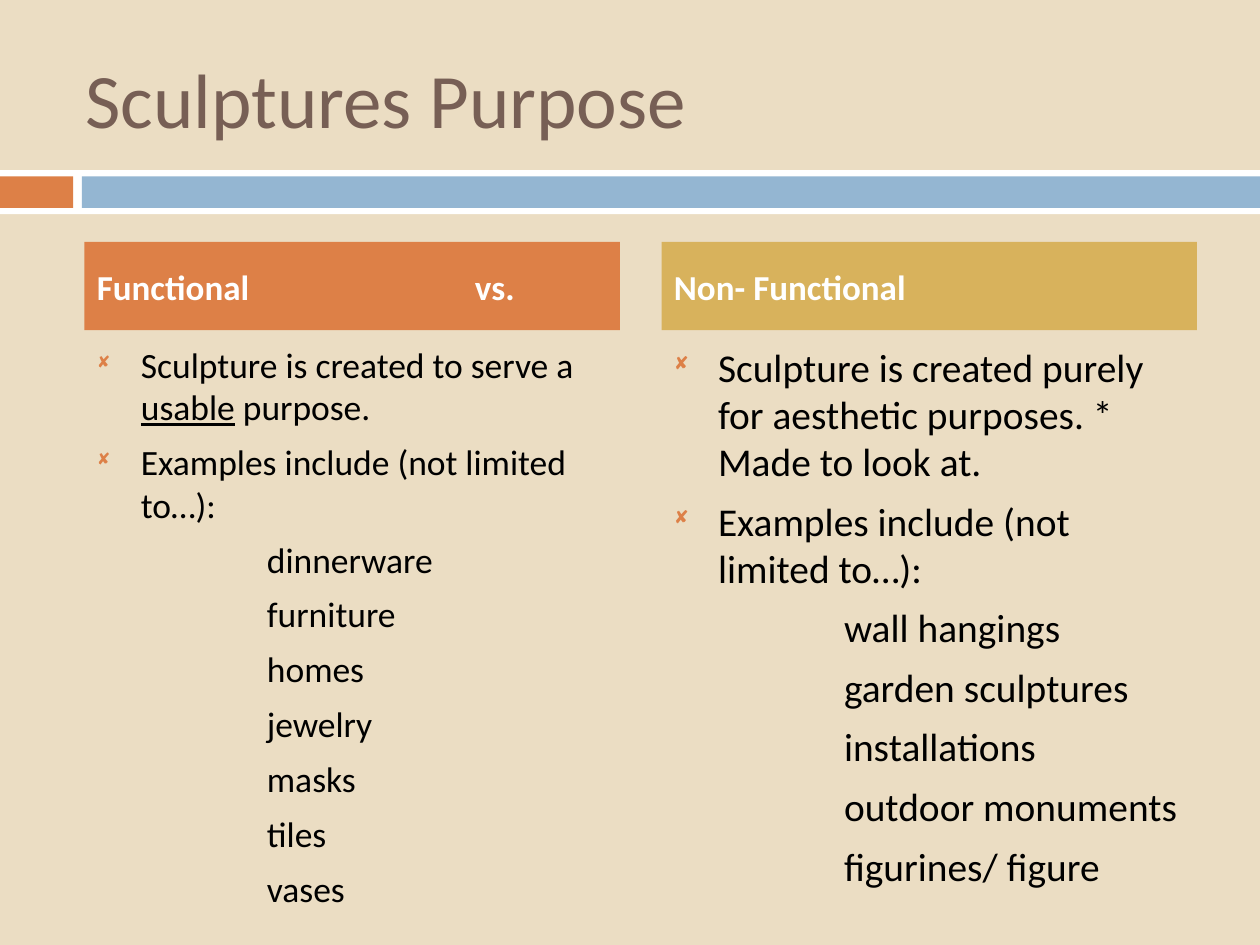
from lxml import etree
from pptx import Presentation
from pptx import util as u
from pptx.dml.color import RGBColor
from pptx.enum import shapes, text
from pptx.oxml import ns

SAND, WHITE, BLACK, BROWN = "EBDDC3", "FFFFFF", "000000", "775F55"
RUST, BLUE, GOLD = "DD8047", "94B6D2", "D8B25C"


def color(code):
    return RGBColor.from_string(code)


def indent(par, left, first):
    """Set the indents, with a tab at every inch."""
    props = par._p.get_or_add_pPr()
    for key, val in {"marL": left, "indent": first, "defTabSz": 1}.items():
        props.set(key, str(u.Inches(val)))


def bullet(par):
    """Put a small square bullet before the paragraph."""
    props = par._p.get_or_add_pPr()
    tint = etree.SubElement(props, ns.qn("a:buClr"))
    etree.SubElement(tint, ns.qn("a:srgbClr"), val=RUST)
    etree.SubElement(props, ns.qn("a:buSzPct"), val="60000")
    etree.SubElement(props, ns.qn("a:buFont"), typeface="Wingdings")
    etree.SubElement(props, ns.qn("a:buChar"), char="◻")


class Deck:
    face = "Calibri"
    hang = 0.35
    gap = 7

    def __init__(self, wide, high):
        self.prs = Presentation()
        self.prs.slide_width = u.Inches(wide)
        self.prs.slide_height = u.Inches(high)

    def page(self, back):
        self.slide = self.prs.slides.add_slide(self.prs.slide_layouts[6])
        fill = self.slide.background.fill
        fill.solid()
        fill.fore_color.rgb = color(back)

    def style(self, font, code, **look):
        for key, val in {"name": self.face, **look}.items():
            setattr(font, key, val)
        font.color.rgb = color(code)

    def bar(self, place, code):
        box = self.slide.shapes.add_shape(
            shapes.MSO_SHAPE.RECTANGLE, *map(u.Inches, place))
        box.shadow.inherit = False
        box.fill.solid()
        box.fill.fore_color.rgb = color(code)
        box.line.fill.background()
        return box

    def label(self, box, words, code, **look):
        """Write one line, left and centred in height, in a shape."""
        frame = box.text_frame
        frame.word_wrap = True
        frame.vertical_anchor = text.MSO_ANCHOR.MIDDLE
        par = frame.paragraphs[0]
        par.alignment = text.PP_ALIGN.LEFT
        indent(par, 0, 0)
        run = par.add_run()
        run.text = words
        self.style(run.font, code, **look)

    def area(self, place):
        box = self.slide.shapes.add_textbox(*map(u.Inches, place))
        box.text_frame.word_wrap = True
        return box

    def body(self, place, points, items, size):
        """Write bulleted points (lists of runs), then tabbed items."""
        frame = self.area(place).text_frame
        rows = points + [["\t\t" + item] for item in items]
        for i, row in enumerate(rows):
            par = frame.paragraphs[0] if i == 0 else frame.add_paragraph()
            indent(par, self.hang, -self.hang)
            if i < len(points):
                bullet(par)
            if i:
                par.space_before = u.Pt(self.gap)
            for j, words in enumerate(row):
                run = par.add_run()
                run.text = words
                self.style(run.font, BLACK, size=u.Pt(size))
                if j == 1:
                    run.font.underline = True


def main():
    deck = Deck(10, 7.5)
    deck.page(SAND)
    for left, top, wide, high, code in (
            (0, 1.35, 10, 0.35, WHITE),
            (0, 1.4, 0.58, 0.25, RUST),
            (0.65, 1.4, 9.35, 0.25, BLUE)):
        deck.bar((left, top, wide, high), code)
    deck.label(deck.area((0.58, 0.3, 8.92, 0.95)), "Sculptures Purpose",
               BROWN, size=u.Pt(44))

    listing = ["Examples include (not limited to…):"]
    columns = (
        (0.67, "Functional \t\tvs.", RUST, 20.3,
         ["Sculpture is created to serve a ", "usable", " purpose."],
         ["dinnerware", "furniture", "homes", "jewelry", "masks", "tiles",
          "vases"]),
        (5.25, "Non- Functional", GOLD, 22.5,
         ["Sculpture is created purely for aesthetic purposes. "
          "* Made to look at."],
         ["wall hangings", "garden sculptures", "installations",
          "outdoor monuments", "figurines/ figure"]),
    )
    for left, head, code, size, lead, items in columns:
        deck.body((left, 2.67, 4.25, 3.92), [lead, listing], items, size)
        deck.label(deck.bar((left, 1.92, 4.25, 0.7), code), head, WHITE,
                   size=u.Pt(20), bold=True)
    deck.prs.save("out.pptx")


if __name__ == "__main__":
    main()
